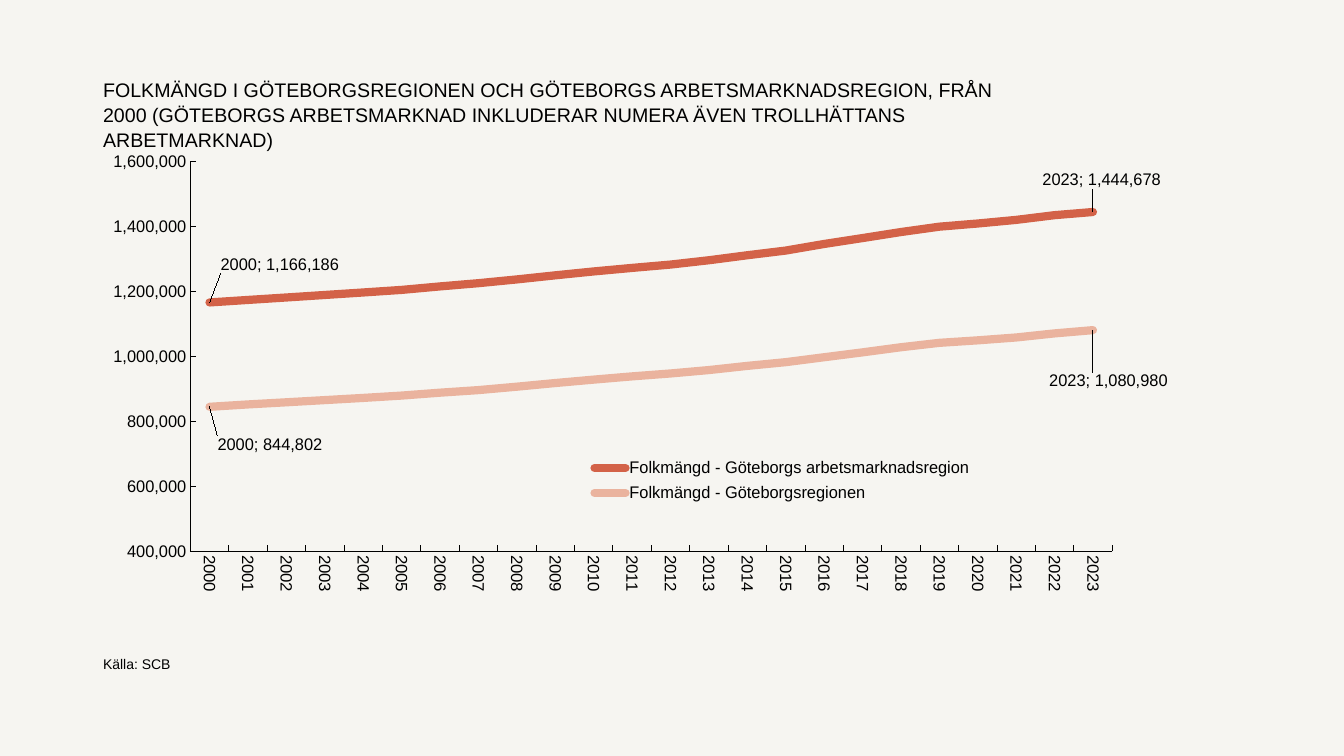
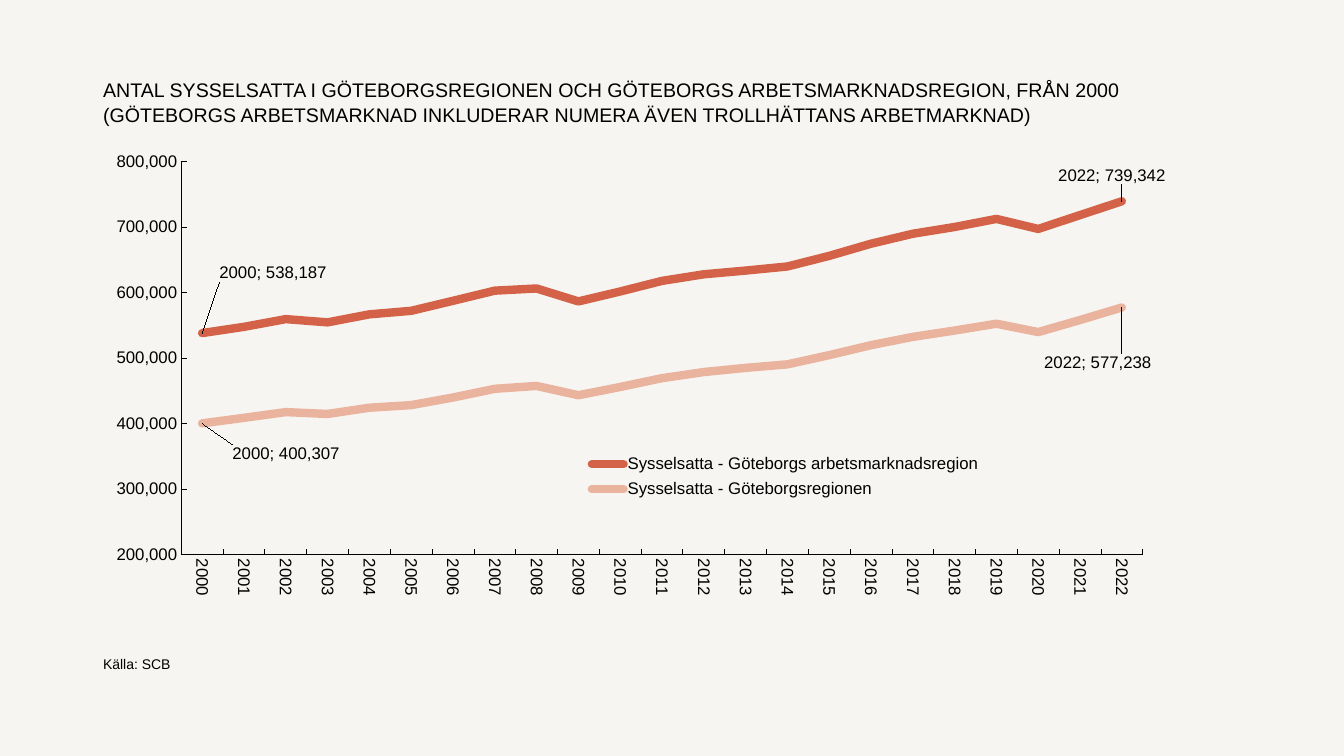
from pptx import Presentation
from pptx.chart.data import CategoryChartData
from pptx.dml.color import RGBColor
from pptx.enum.chart import XL_CHART_TYPE as ChartType, XL_LEGEND_POSITION as LegendPos, XL_TICK_MARK as Tick
from pptx.enum.text import MSO_ANCHOR as Anchor, MSO_AUTO_SIZE as AutoSize, PP_ALIGN as Align
from pptx.oxml import parse_xml
from pptx.oxml.ns import nsdecls
from pptx.util import Emu, Pt

EMU_PER_PX = 914400 / 100.8
PAPER = RGBColor(0xF6, 0xF5, 0xF1)
BLACK = RGBColor(0, 0, 0)
BRICK = RGBColor(0xD3, 0x62, 0x48)
PEACH = RGBColor(0xEA, 0xB3, 0x9E)
FONT = "Arial"
CHART_WIDTH, CHART_HEIGHT = 1072, 476
C15 = "http://schemas.microsoft.com/office/drawing/2012/chart"


def px(*lengths):
    return [Emu(round(length * EMU_PER_PX)) for length in lengths]


def write(holder, text, box, size, anchor=Anchor.TOP, line_spacing=1.0):
    holder.left, holder.top, holder.width, holder.height = px(*box)
    frame = holder.text_frame
    frame.text = text
    frame.word_wrap = True
    frame.auto_size = AutoSize.NONE
    frame.vertical_anchor = anchor
    for paragraph in frame.paragraphs:
        paragraph.alignment = Align.LEFT
        paragraph.space_before = Pt(0)
        paragraph.line_spacing = line_spacing
        paragraph.font.name = FONT
        paragraph.font.size = Pt(size)
        paragraph.font.bold = False
        paragraph.font.color.rgb = BLACK


population = {
    "title": "FOLKMÄNGD I GÖTEBORGSREGIONEN OCH GÖTEBORGS ARBETSMARKNADSREGION, FRÅN 2000 "
             "(GÖTEBORGS ARBETSMARKNAD INKLUDERAR NUMERA ÄVEN TROLLHÄTTANS ARBETMARKNAD)",
    "title_width": 958,
    "left": 96,
    "measure": "Folkmängd",
    "scale": (400000, 1600000, 200000),
    "plot": (0.09, 0.037, 0.88, 0.819),
    "legend": (500, 308, 405, 57),
    "label_shifts": [[(72, -38), (9, -32)], [(62, 38), (16, 51)]],
    "values": [
        [1166186, 1173946, 1181504, 1189146, 1196900, 1204793, 1215553, 1225472,
         1237125, 1249654, 1261596, 1272532, 1282758, 1296057, 1311439, 1325949,
         1346210, 1364367, 1383003, 1399462, 1409208, 1420333, 1434927, 1444678],
        [844802, 852110, 858709, 865444, 872155, 879298, 888229, 896157,
         906691, 917984, 928629, 938580, 947575, 958024, 970912, 982360,
         997446, 1012569, 1028248, 1041850, 1049592, 1058278, 1070935, 1080980],
    ],
}
employment = {
    "title": "ANTAL SYSSELSATTA I GÖTEBORGSREGIONEN OCH GÖTEBORGS ARBETSMARKNADSREGION, FRÅN 2000\n"
             "(GÖTEBORGS ARBETSMARKNAD INKLUDERAR NUMERA ÄVEN TROLLHÄTTANS ARBETMARKNAD)",
    "title_width": 1045,
    "left": 103,
    "measure": "Sysselsatta",
    "scale": (200000, 800000, 100000),
    "plot": (0.073, 0.037, 0.897, 0.826),
    "legend": (475, 304, 415, 57),
    "label_shifts": [[(71, -60), (-10, -26)], [(84, 30), (-24, 55)]],
    "values": [
        [538187, 547702, 559485, 554541, 566775, 572189, 587451, 602958,
         606270, 586505, 601671, 617858, 627897, 633567, 639846, 656009,
         674617, 689821, 700089, 712469, 697126, 718288, 739342],
        [400307, 408774, 417517, 414706, 424218, 428204, 439787, 453111,
         457443, 443287, 455869, 469355, 478702, 485048, 490442, 504494,
         519713, 532360, 542061, 552481, 539691, 558117, 577238],
    ],
}

presentation = Presentation()
presentation.slide_width, presentation.slide_height = px(1344, 756)
background = presentation.slide_master.background.fill
background.solid()
background.fore_color.rgb = PAPER
title_and_text = presentation.slide_layouts[2]

for topic in (population, employment):
    slide = presentation.slides.add_slide(title_and_text)
    heading, source = slide.placeholders
    write(heading, topic["title"], (93, 71, topic["title_width"], 51), 14, line_spacing=1.07)
    write(source, "Källa: SCB", (93, 649, 1088, 28), 10, anchor=Anchor.BOTTOM)

    data = CategoryChartData(number_format="#,##0")
    last = len(topic["values"][0]) - 1
    data.categories = [str(2000 + year) for year in range(last + 1)]
    for region, values in zip(("Göteborgs arbetsmarknadsregion", "Göteborgsregionen"), topic["values"]):
        data.add_series(f"{topic['measure']} - {region}", values)
    chart = slide.shapes.add_chart(
        ChartType.LINE, *px(topic["left"], 144, CHART_WIDTH, CHART_HEIGHT), data).chart
    chart.has_title = False
    chart.font.name = FONT
    chart.font.size = Pt(12)
    chart.font.color.rgb = BLACK
    chart.plots[0].vary_by_categories = False
    chart.has_legend = True
    chart.legend.position = LegendPos.TOP
    chart.legend.include_in_layout = True

    for axis in (chart.category_axis, chart.value_axis):
        axis.has_major_gridlines = False
        axis.major_tick_mark = Tick.INSIDE
        axis.minor_tick_mark = Tick.NONE
        axis.format.line.color.rgb = BLACK
        axis.format.line.width = Pt(0.5)
        axis.tick_labels.font.name = FONT
        axis.tick_labels.font.size = Pt(12)
        axis.tick_labels.font.color.rgb = BLACK
    amounts = chart.value_axis
    amounts.minimum_scale, amounts.maximum_scale, amounts.major_unit = topic["scale"]
    amounts.tick_labels.number_format = "#,##0"
    amounts.tick_labels.number_format_is_linked = False
    year_text = chart.element.xpath(".//c:catAx/c:txPr/a:bodyPr")[0]
    year_text.set("rot", "5400000")
    year_text.set("vert", "horz")

    left, top, width, height = topic["legend"]
    legend_area = (left / CHART_WIDTH, top / CHART_HEIGHT, width / CHART_WIDTH, height / CHART_HEIGHT)
    for part, area, target in (("plotArea", topic["plot"], '<c:layoutTarget val="inner"/>'),
                               ("legend", legend_area, "")):
        owner = chart.element.xpath(f".//c:{part}")[0]
        for automatic in owner.xpath("./c:layout"):
            owner.remove(automatic)
        sides = "".join(f'<c:{side} val="{share:.3f}"/>' for side, share in zip("xywh", area))
        layout = parse_xml(
            f'<c:layout {nsdecls("c")}><c:manualLayout>{target}<c:xMode val="edge"/>'
            f'<c:yMode val="edge"/>{sides}</c:manualLayout></c:layout>')
        if part == "plotArea":
            owner.insert(0, layout)
        else:
            owner.xpath("./c:legendPos")[0].addnext(layout)

    series_xml = chart.element.xpath(".//c:ser")
    for line, node, colour, shifts in zip(
            chart.plots[0].series, series_xml, (BRICK, PEACH), topic["label_shifts"]):
        line.smooth = False
        line.format.line.color.rgb = colour
        line.format.line.width = Pt(6)
        stroke = node.xpath("./c:spPr/a:ln")[0]
        stroke.set("cap", "rnd")
        stroke.append(parse_xml(f'<a:round {nsdecls("a")}/>'))
        labels = "".join(
            f'<c:dLbl><c:idx val="{index}"/><c:layout><c:manualLayout>'
            f'<c:x val="{dx / CHART_WIDTH:.4f}"/><c:y val="{dy / CHART_HEIGHT:.4f}"/>'
            '</c:manualLayout></c:layout><c:dLblPos val="ctr"/><c:showLegendKey val="0"/>'
            '<c:showVal val="1"/><c:showCatName val="1"/><c:showSerName val="0"/>'
            '<c:showPercent val="0"/><c:showBubbleSize val="0"/>'
            '<c:separator>; </c:separator></c:dLbl>'
            for index, (dx, dy) in zip((0, last), shifts))
        node.xpath("./c:cat")[0].addprevious(parse_xml(
            f'<c:dLbls {nsdecls("c", "a")}>{labels}<c:spPr><a:noFill/><a:ln><a:noFill/></a:ln></c:spPr>'
            '<c:showLegendKey val="0"/><c:showVal val="0"/><c:showCatName val="0"/>'
            '<c:showSerName val="0"/><c:showPercent val="0"/><c:showBubbleSize val="0"/>'
            '<c:extLst><c:ext uri="{CE6537A1-D6FC-4f65-9D91-7224C49458BB}" '
            f'xmlns:c15="{C15}"><c15:showLeaderLines val="1"/><c15:leaderLines><c:spPr><a:ln w="6350">'
            f'<a:solidFill><a:srgbClr val="{BLACK}"/></a:solidFill></a:ln></c:spPr></c15:leaderLines>'
            '</c:ext></c:extLst></c:dLbls>'))

presentation.save("out.pptx")
